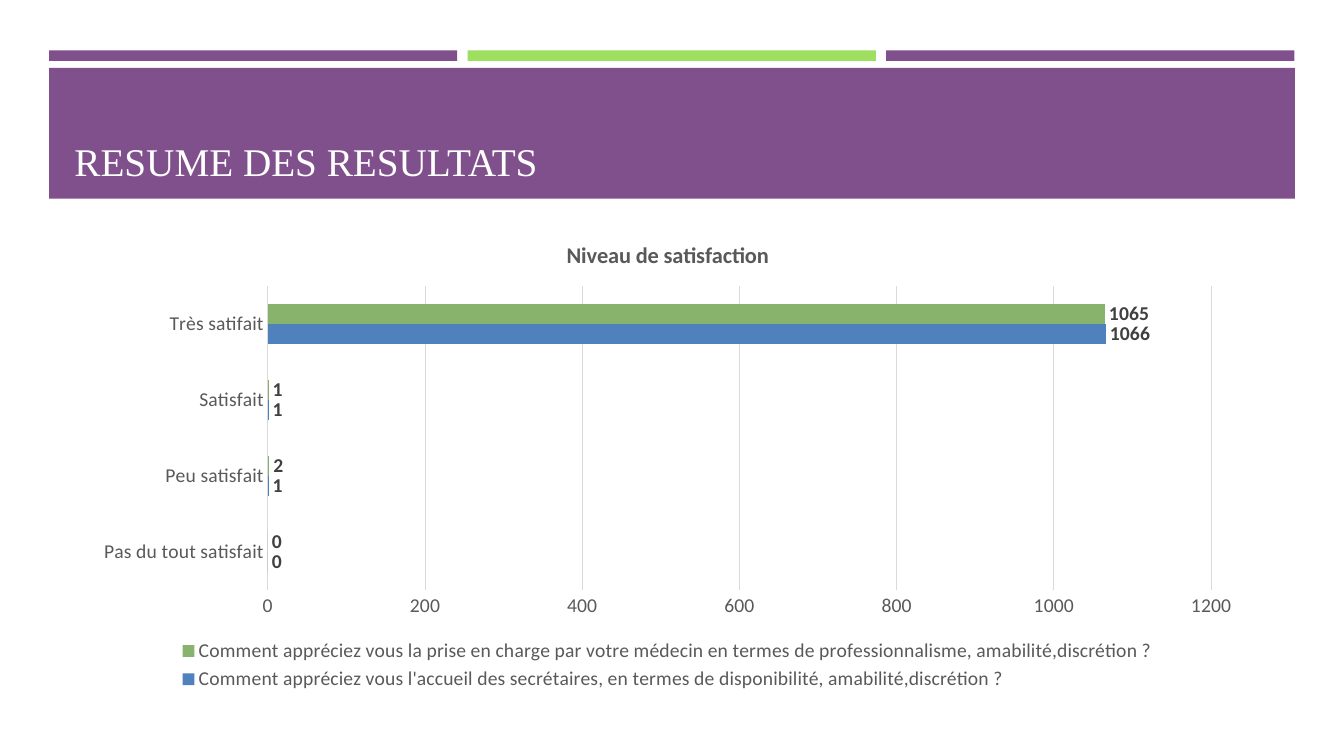
from pptx import Presentation
from pptx.chart.data import CategoryChartData
from pptx.dml.color import RGBColor
from pptx.enum.chart import XL_CHART_TYPE as CT, XL_LABEL_POSITION as LP
from pptx.enum.chart import XL_LEGEND_POSITION as LEG, XL_TICK_MARK as TICK
from pptx.enum.shapes import MSO_SHAPE as SHAPE
from pptx.enum.text import MSO_ANCHOR as ANCHOR, PP_ALIGN as ALIGN
from pptx.util import Pt

PURPLE, GREEN, GREY, GRID = "7F508B", "9FDF5F", "595959", "D9D9D9"
CATEGORIES = ["Pas du tout satisfait", "Peu satisfait", "Satisfait", "Très satifait"]
SERIES = [
    ("Comment appréciez vous l'accueil des secrétaires, en termes de "
     "disponibilité, amabilité,discrétion ?", (0, 1, 1, 1066), "4F81BD"),
    ("Comment appréciez vous la prise en charge par votre médecin en termes de "
     "professionnalisme, amabilité,discrétion ?", (0, 2, 1, 1065), "88B36D"),
]


def rgb(value):
    return RGBColor.from_string(value)


def set_all(obj, **values):
    for name, value in values.items():
        setattr(obj, name, value)


def set_font(font, color, size=14, name="Calibri", bold=False):
    set_all(font, size=Pt(size), name=name, bold=bold)
    font.color.rgb = rgb(color)


def set_line(line, color):
    line.color.rgb = rgb(color)
    line.width = Pt(0.75)


def add_bar(slide, left, top, width, height, color):
    sp = slide.shapes.add_shape(SHAPE.RECTANGLE, Pt(left), Pt(top), Pt(width), Pt(height))
    sp.shadow.inherit = False
    sp.fill.solid()
    sp.fill.fore_color.rgb = rgb(color)
    sp.line.fill.background()


def add_title(slide, text):
    sp = slide.shapes.title
    slide.shapes._spTree.append(sp._element)
    set_all(sp, left=Pt(46), top=Pt(55.5), width=Pt(868.5), height=Pt(80))
    tf = sp.text_frame
    set_all(tf, word_wrap=True, vertical_anchor=ANCHOR.BOTTOM)
    p = tf.paragraphs[0]
    p.alignment = ALIGN.LEFT
    r = p.add_run()
    r.text = text
    set_font(r.font, "FFFFFF", 28, "Times New Roman")


def format_axes(chart):
    for axis in (chart.category_axis, chart.value_axis):
        set_all(axis, major_tick_mark=TICK.NONE, minor_tick_mark=TICK.NONE)
        set_font(axis.tick_labels.font, GREY)
    set_line(chart.category_axis.format.line, GRID)
    axis = chart.value_axis
    set_all(axis, minimum_scale=0, maximum_scale=1200, major_unit=200)
    axis.format.line.fill.background()
    set_line(axis.major_gridlines.format.line, GRID)


def add_bar_chart(slide, title):
    data = CategoryChartData()
    data.categories = CATEGORIES
    for name, values, _ in SERIES:
        data.add_series(name, values)
    chart = slide.shapes.add_chart(
        CT.BAR_CLUSTERED, Pt(57.6), Pt(157.7), Pt(838.8), Pt(339), data).chart
    set_font(chart.font, "000000")
    chart.has_title = True
    p = chart.chart_title.text_frame.paragraphs[0]
    r = p.add_run()
    r.text = title
    set_font(r.font, GREY, 16, bold=True)
    chart.chart_title.include_in_layout = False
    chart.has_legend = True
    set_all(chart.legend, position=LEG.BOTTOM, include_in_layout=False)
    set_font(chart.legend.font, GREY)
    format_axes(chart)
    plot = chart.plots[0]
    set_all(plot, gap_width=182, overlap=0, vary_by_categories=False)
    for series, (_, _, color) in zip(plot.series, SERIES):
        series.format.fill.solid()
        series.format.fill.fore_color.rgb = rgb(color)
        labels = series.data_labels
        set_all(labels, show_value=True, position=LP.OUTSIDE_END)
        set_font(labels.font, "404040", bold=True)


def main():
    prs = Presentation()
    set_all(prs, slide_width=Pt(960), slide_height=Pt(540))
    slide = prs.slides.add_slide(prs.slide_layouts[5])
    for i, color in enumerate((PURPLE, GREEN, PURPLE)):
        add_bar(slide, 35 + i * 299, 36, 291.6, 7.5, color)
    add_bar(slide, 35, 48.5, 890, 93.5, PURPLE)
    add_title(slide, "RESUME DES RESULTATS")
    add_bar_chart(slide, "Niveau de satisfaction")
    prs.save("out.pptx")


if __name__ == "__main__":
    main()
